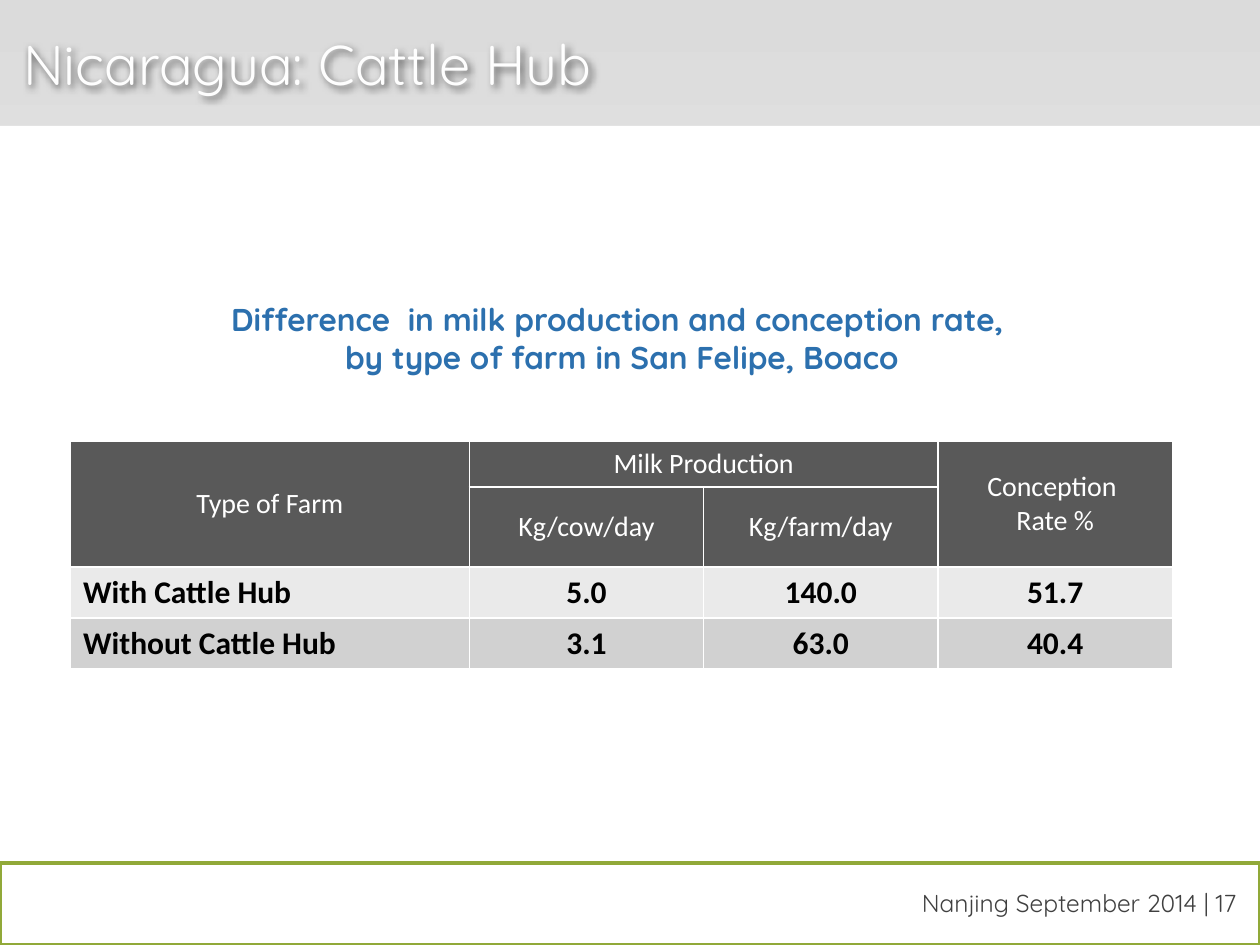
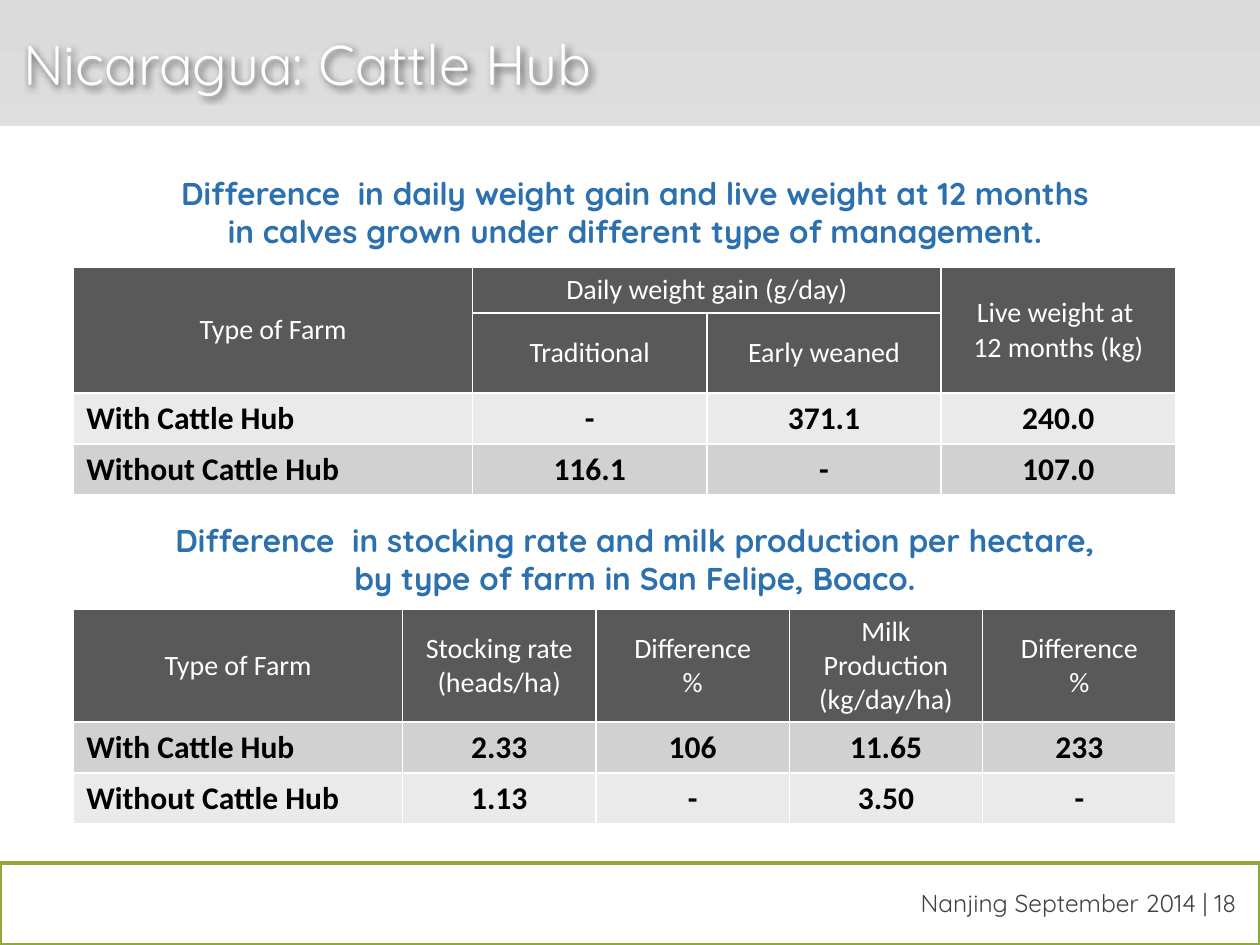
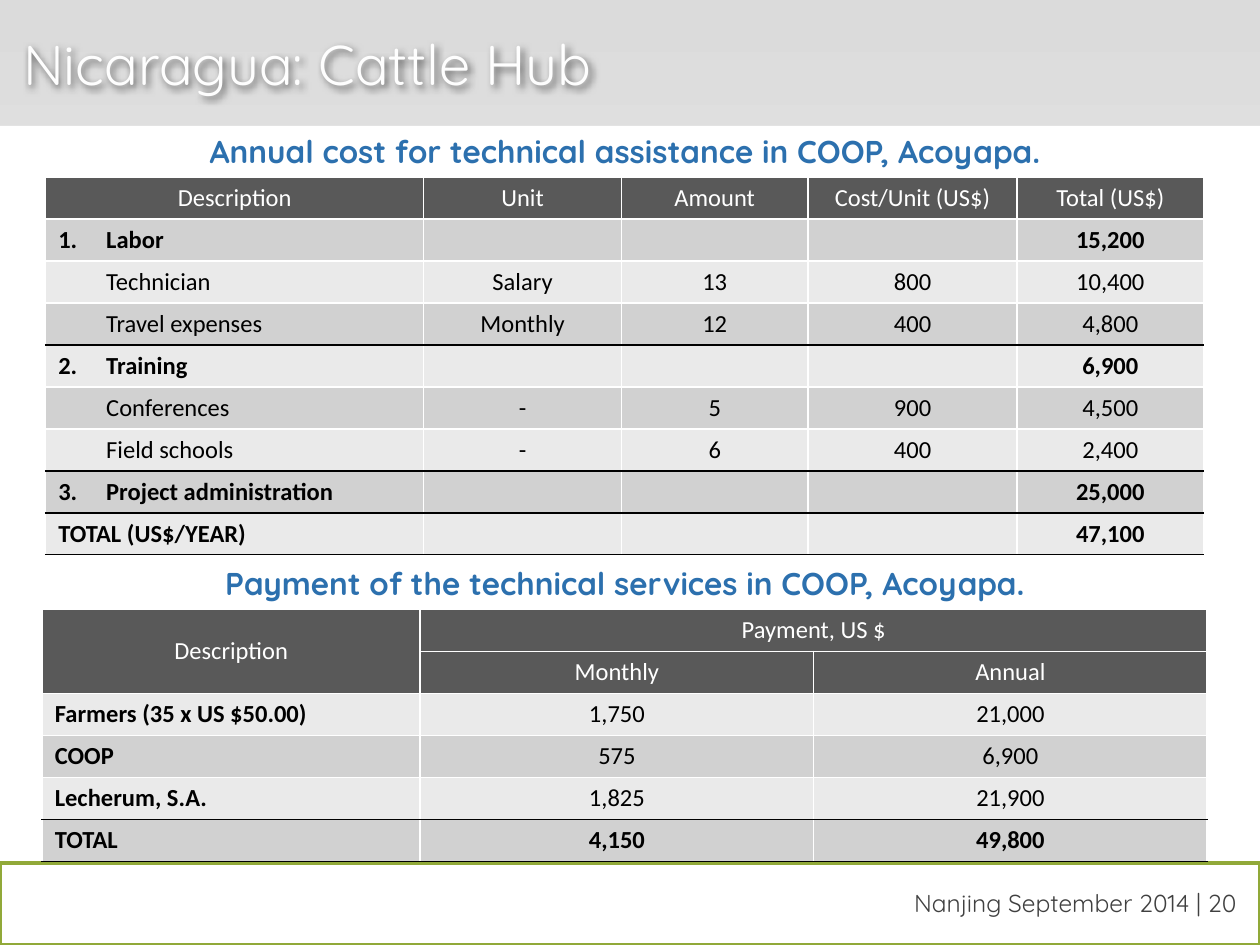
from dataclasses import dataclass, field

import lxml.etree
import pptx
import pptx.dml.color
import pptx.enum.shapes
import pptx.enum.text
import pptx.oxml
import pptx.oxml.ns
import pptx.util

RGBColor = pptx.dml.color.RGBColor
Pt = pptx.util.Pt
ALIGN = pptx.enum.text.PP_ALIGN
ANCHOR = pptx.enum.text.MSO_ANCHOR
RECT = pptx.enum.shapes.MSO_SHAPE.RECTANGLE
qn = pptx.oxml.ns.qn

WHITE = RGBColor(0xFF, 0xFF, 0xFF)
BLACK = RGBColor(0x00, 0x00, 0x00)
SILVER = RGBColor(0xDB, 0xDB, 0xDB)
TITLE_WHITE = RGBColor(0xFE, 0xFE, 0xFE)
GREEN = RGBColor(0x91, 0xA9, 0x39)
FOOTER_GRAY = RGBColor(0x40, 0x40, 0x40)
CAPTION_BLUE = RGBColor(0x2C, 0x70, 0xAE)
HEADER_GRAY = RGBColor(0x59, 0x59, 0x59)
LIGHT = RGBColor(0xEA, 0xEA, 0xEA)
DARK = RGBColor(0xD1, 0xD1, 0xD1)

DISPLAY_FONT = "Quicksand"
TABLE_FONT = "Calibri"
TITLE = "Nicaragua: Cattle Hub"
EVENT = "Nanjing September 2014"

SLIDE_W = pptx.util.Inches(10)
SLIDE_H = pptx.util.Inches(7.5)
COLUMNS, ROWS = 100, 75
BAND_ROWS = 10
FOOTER_TOP = 68.5
OUTLINE_INDENT = 3.8


def col(n: float) -> int:
    return round(SLIDE_W * n / COLUMNS)


def row(n: float) -> int:
    return round(SLIDE_H * n / ROWS)


@dataclass
class Box:
    left: float
    top: float
    width: float
    height: float

    def place(self) -> tuple[int, int, int, int]:
        return col(self.left), row(self.top), col(self.width), row(self.height)


@dataclass
class Caption:
    box: Box
    text: str


@dataclass
class Table:
    left: float
    top: float
    widths: list[float]
    heights: list[float]
    cells: list[list[str]]
    header_rows: int
    header_size: int = 16
    body_size: int = 18
    merges: list[tuple[int, int, int, int]] = field(default_factory=list)
    bold_rows: set[int] = field(default_factory=set)
    bold_labels: bool = False
    numbers: dict[int, int] = field(default_factory=dict)
    indented: set[int] = field(default_factory=set)
    rules: set[int] = field(default_factory=set)


@dataclass
class Page:
    number: int
    captions: list[Caption]
    tables: list[Table]


def farm_table(left: float, top: float, heads: list[str], values: list[list[str]]) -> Table:
    group, first, second, last = heads
    return Table(
        left, top, [31.65, 18.6, 18.6, 18.6], [3.63, 6.35, 4.03, 4.03],
        [["Type of Farm", group, "", last],
         ["", first, second, ""],
         ["With Cattle Hub", *values[0]],
         ["Without Cattle Hub", *values[1]]],
        header_rows=2,
        merges=[(0, 0, 1, 0), (0, 1, 0, 2), (0, 3, 1, 3)],
        bold_rows={2, 3},
    )


PAGES = [
    Page(
        17,
        [Caption(Box(0.6, 23.3, 97.5, 7.1),
                 "Difference  in milk production and conception rate, \n"
                 "by type of farm in San Felipe, Boaco")],
        [farm_table(5.6, 35.03, ["Milk Production", "Kg/cow/day", "Kg/farm/day", "Conception \nRate %"],
                    [["5.0", "140.0", "51.7"], ["3.1", "63.0", "40.4"]])],
    ),
    Page(
        18,
        [Caption(Box(2.5, 13.3, 95.8, 7.1),
                 "Difference  in daily weight gain and live weight at 12 months\n"
                 "in calves grown under different type of management."),
         Caption(Box(2.5, 40.85, 95.8, 7.1),
                 "Difference  in stocking rate and milk production per hectare,\n"
                 "by type of farm in San Felipe, Boaco.")],
        [farm_table(5.85, 21.23, ["Daily weight gain (g/day)", "Traditional", "Early weaned",
                                  "Live weight at \n12 months (kg)"],
                    [["-", "371.1", "240.0"], ["116.1", "-", "107.0"]]),
         Table(5.85, 48.38, [26.1] + [15.35] * 4, [8.93, 4.05, 4.05],
               [["Type of Farm", "Stocking rate\n(heads/ha)", "Difference\n%",
                 "Milk Production\n(kg/day/ha)", "Difference\n%"],
                ["With Cattle Hub", "2.33", "106", "11.65", "233"],
                ["Without Cattle Hub", "1.13", "-", "3.50", "-"]],
               header_rows=1, bold_rows={1, 2})],
    ),
    Page(
        20,
        [Caption(Box(1.7, 10, 95.8, 4),
                 "Annual cost for technical assistance in COOP, Acoyapa."),
         Caption(Box(1.7, 44.3, 95.8, 4),
                 "Payment of the technical services in COOP, Acoyapa.")],
        [Table(3.63, 14.05, [30, 15.7, 14.8, 16.6, 14.8], [30 / 9] * 9,
               [["Description", "Unit", "Amount", "Cost/Unit (US$)", "Total (US$)"],
                ["Labor", "", "", "", "15,200"],
                ["Technician", "Salary", "13", "800", "10,400"],
                ["Travel expenses", "Monthly", "12", "400", "4,800"],
                ["Training", "", "", "", "6,900"],
                ["Conferences", "-", "5", "900", "4,500"],
                ["Field schools", "-", "6", "400", "2,400"],
                ["Project administration", "", "", "", "25,000"],
                ["TOTAL (US$/YEAR)", "", "", "", "47,100"]],
               header_rows=1, header_size=14, body_size=14,
               bold_rows={1, 4, 7, 8}, numbers={1: 1, 4: 2, 7: 3},
               indented={2, 3, 5, 6}, rules={4, 7, 8, 9}),
         Table(3.35, 48.37, [30, 31.23, 31.23], [20 / 6] * 6,
               [["Description", "Payment, US $", ""],
                ["", "Monthly", "Annual"],
                ["Farmers (35 x US $50.00)", "1,750", "21,000"],
                ["COOP", "575", "6,900"],
                ["Lecherum, S.A.", "1,825", "21,900"],
                ["TOTAL", "4,150", "49,800"]],
               header_rows=2, header_size=14, body_size=14,
               merges=[(0, 0, 1, 0), (0, 1, 0, 2)],
               bold_rows={5}, bold_labels=True, rules={5, 6})],
    ),
]


def write(p, text: str, font: str, size: int, color: RGBColor, bold: bool = False) -> None:
    for i, line in enumerate(text.split("\n")):
        if i:
            p.add_line_break()
        r = p.add_run()
        r.text = line
        r.font.name = font
        r.font.size = Pt(size)
        r.font.bold = bold
        r.font.color.rgb = color


def add_text(slide, box: Box, text: str, size: int, color: RGBColor, align, bold: bool = False) -> None:
    tf = slide.shapes.add_textbox(*box.place()).text_frame
    tf.word_wrap = True
    p = tf.paragraphs[0]
    p.alignment = align
    write(p, text, DISPLAY_FONT, size, color, bold)


def add_band(slide, top: float, line: RGBColor | None = None) -> None:
    sp = slide.shapes.add_shape(RECT, *Box(0, top, COLUMNS, ROWS - top).place())
    sp.shadow.inherit = False
    sp.fill.solid()
    sp.fill.fore_color.rgb = WHITE
    if line is None:
        sp.line.fill.background()
    else:
        sp.line.color.rgb = line
        sp.line.width = Pt(2.25)


def style_template(prs, layout) -> None:
    fill = prs.slide_master.background.fill
    fill.gradient()
    fill.gradient_angle = 270
    for stop, color, position in zip(fill.gradient_stops, (SILVER, WHITE), (0, 1)):
        stop.color.rgb = color
        stop.position = position
    title, *footers = layout.placeholders
    title.left, title.top, title.width, title.height = Box(0.83, 0, 97.5, BAND_ROWS).place()
    for sp in footers:
        sp.element.getparent().remove(sp.element)


def add_title(slide) -> None:
    sp = slide.shapes.title
    tf = sp.text_frame
    tf.auto_size = pptx.enum.text.MSO_AUTO_SIZE.NONE
    tf.vertical_anchor = ANCHOR.MIDDLE
    p = tf.paragraphs[0]
    p.alignment = ALIGN.LEFT
    write(p, TITLE, DISPLAY_FONT, 32, TITLE_WHITE)
    sp.shadow.inherit = False
    effects = sp.element.spPr.find(qn("a:effectLst"))
    shadow = lxml.etree.SubElement(effects, qn("a:outerShdw"), blurRad="50800", dist="25400",
                                   dir="2700000", algn="tl", rotWithShape="0")
    color = lxml.etree.SubElement(shadow, qn("a:srgbClr"), val=str(BLACK))
    lxml.etree.SubElement(color, qn("a:alpha"), val="60000")


def set_borders(cell, top: RGBColor, bottom: RGBColor) -> None:
    tcPr = cell._tc.get_or_add_tcPr()
    for side, color in zip("LRTB", (WHITE, WHITE, top, bottom)):
        ln = lxml.etree.SubElement(tcPr, qn(f"a:ln{side}"), w=str(Pt(1)))
        solid = lxml.etree.SubElement(ln, qn("a:solidFill"))
        lxml.etree.SubElement(solid, qn("a:srgbClr"), val=str(color))


def set_indent(p, number: int | None) -> None:
    pPr = p._p.get_or_add_pPr()
    pPr.set("marL", str(col(OUTLINE_INDENT)))
    pPr.set("indent", str(-col(OUTLINE_INDENT) if number else 0))
    if number:
        lxml.etree.SubElement(pPr, qn("a:buFont"), typeface="+mj-lt")
        lxml.etree.SubElement(pPr, qn("a:buAutoNum"), type="arabicPeriod", startAt=str(number))


def fill_cell(cell, t: Table, i: int, j: int) -> None:
    header = i < t.header_rows
    set_borders(cell, BLACK if i in t.rules else WHITE, BLACK if i + 1 in t.rules else WHITE)
    cell.fill.solid()
    cell.fill.fore_color.rgb = HEADER_GRAY if header else (DARK if i % 2 else LIGHT)
    cell.vertical_anchor = ANCHOR.MIDDLE
    cell.margin_top = cell.margin_bottom = row(0.4)
    p = cell.text_frame.paragraphs[0]
    p.alignment = ALIGN.CENTER if header or j else ALIGN.LEFT
    if j == 0 and (i in t.numbers or i in t.indented):
        set_indent(p, t.numbers.get(i))
    size = t.header_size if header else t.body_size
    text = t.cells[i][j]
    if text:
        bold = i in t.bold_rows or (t.bold_labels and j == 0 and not header)
        write(p, text, TABLE_FONT, size, WHITE if header else BLACK, bold)
    else:
        lxml.etree.SubElement(p._p, qn("a:endParaRPr"), sz=str(size * 100))


def add_table(slide, t: Table) -> None:
    box = Box(t.left, t.top, sum(t.widths), sum(t.heights))
    tbl = slide.shapes.add_table(len(t.heights), len(t.widths), *box.place()).table
    tbl.first_row = tbl.horz_banding = False
    for column, width in zip(tbl.columns, t.widths):
        column.width = col(width)
    for tr, height in zip(tbl.rows, t.heights):
        tr.height = row(height)
    for i, texts in enumerate(t.cells):
        for j in range(len(texts)):
            fill_cell(tbl.cell(i, j), t, i, j)
    for top, left, bottom, right in t.merges:
        tbl.cell(top, left).merge(tbl.cell(bottom, right))


def main() -> None:
    prs = pptx.Presentation()
    prs.slide_width, prs.slide_height = SLIDE_W, SLIDE_H
    layout = prs.slide_layouts[5]
    style_template(prs, layout)
    for page in PAGES:
        slide = prs.slides.add_slide(layout)
        add_band(slide, BAND_ROWS)
        add_band(slide, FOOTER_TOP, GREEN)
        add_title(slide)
        add_text(slide, Box(59.15, 70, 40, 3.4), f"{EVENT} | {page.number}", 14, FOOTER_GRAY, ALIGN.RIGHT)
        for caption in page.captions:
            add_text(slide, caption.box, caption.text, 18, CAPTION_BLUE, ALIGN.CENTER, True)
        for table in page.tables:
            add_table(slide, table)
    prs.save("out.pptx")


if __name__ == "__main__":
    main()
